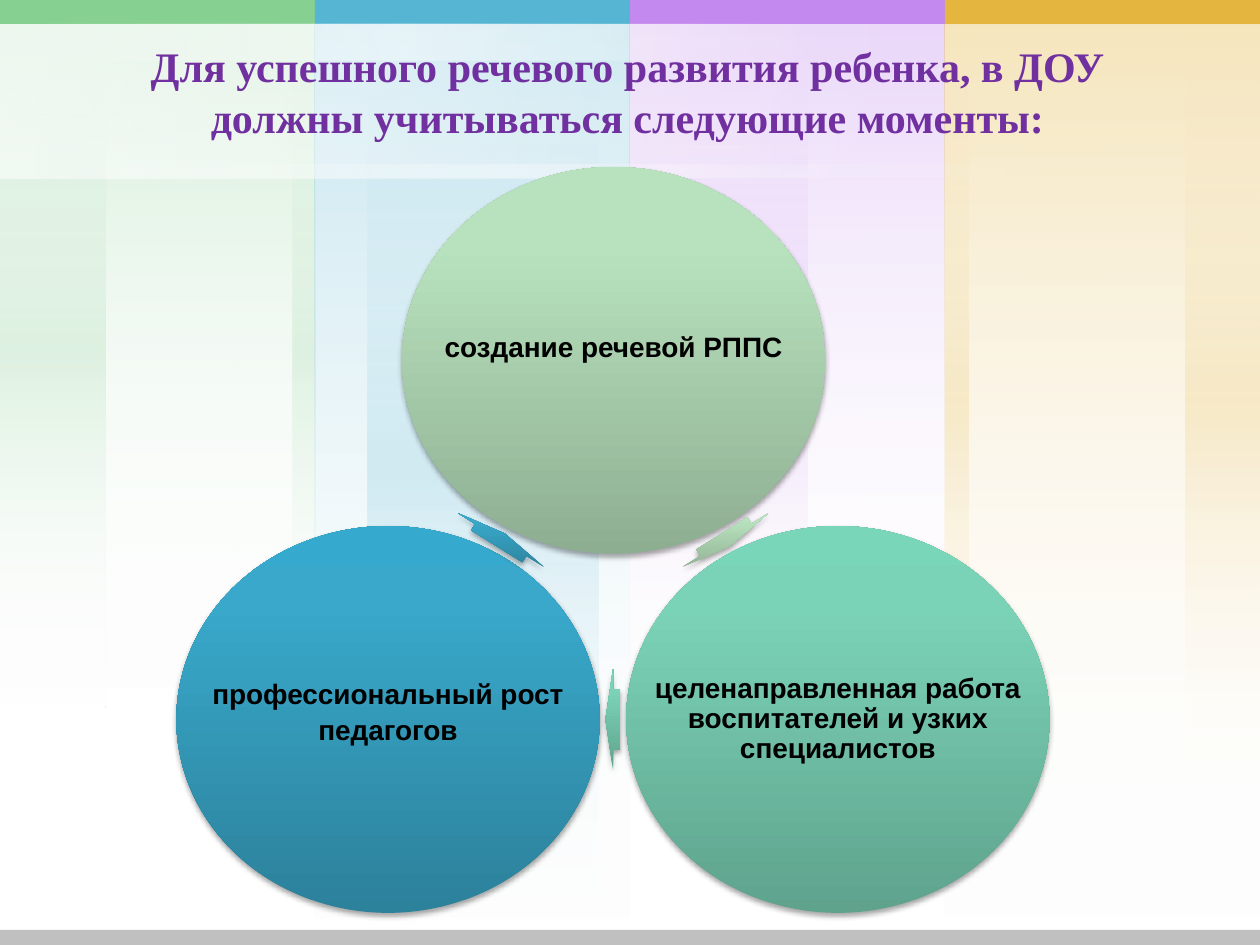
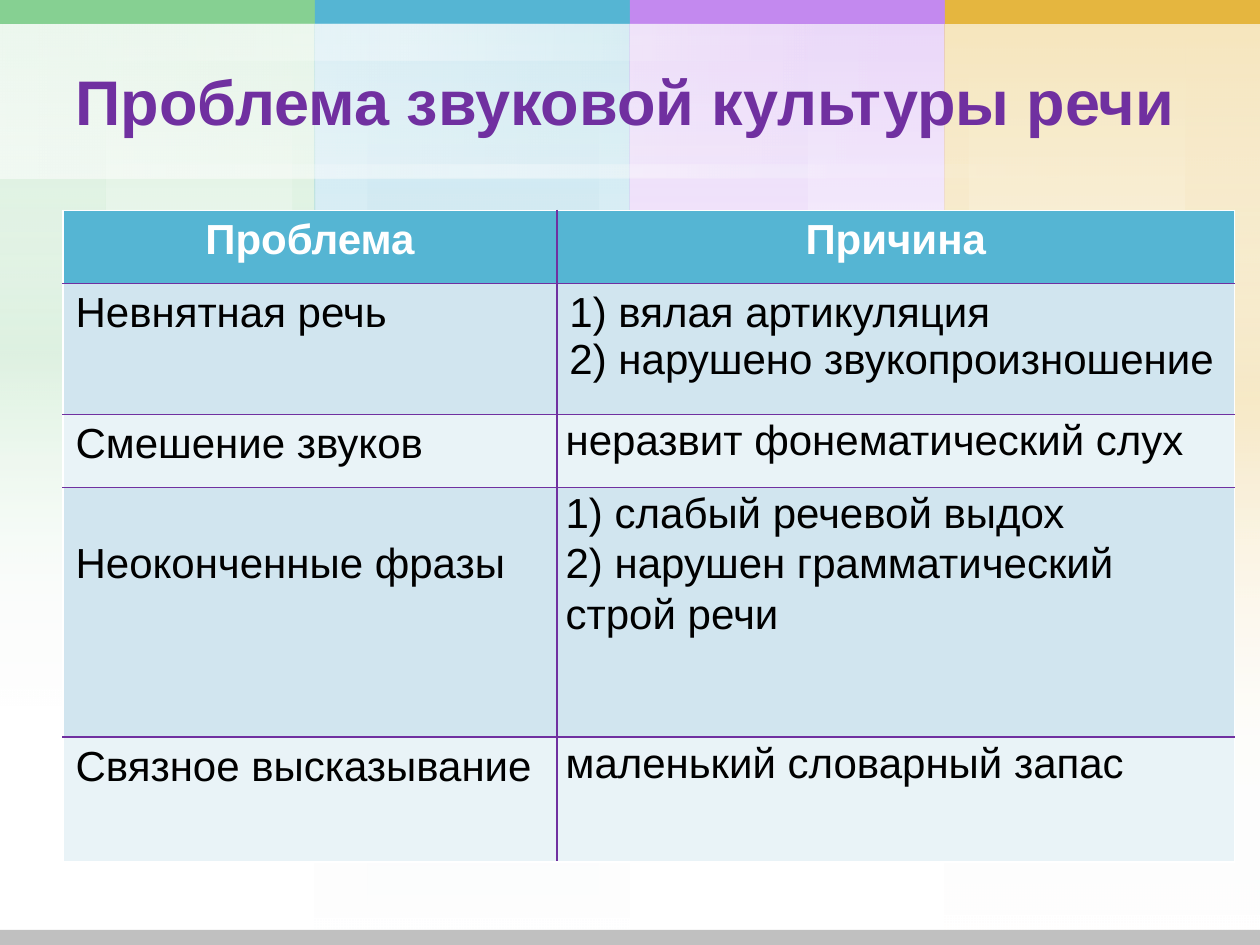
"""Build two slides on children's speech development: a cycle and a table."""
from math import atan2, degrees

from pptx import Presentation
from pptx.dml.color import RGBColor
from pptx.enum.shapes import MSO_SHAPE
from pptx.enum.text import MSO_ANCHOR, MSO_AUTO_SIZE, PP_ALIGN
from pptx.oxml import parse_xml
from pptx.oxml.ns import nsdecls, qn
from pptx.util import Inches, Pt

RECT, OVAL, ARROW = MSO_SHAPE.RECTANGLE, MSO_SHAPE.OVAL, MSO_SHAPE.RIGHT_ARROW
LEFT, CENTER = PP_ALIGN.LEFT, PP_ALIGN.CENTER
TOP, MIDDLE = MSO_ANCHOR.TOP, MSO_ANCHOR.MIDDLE
NO_AUTOFIT = MSO_AUTO_SIZE.NONE

WHITE = RGBColor(0xFF, 0xFF, 0xFF)
BLACK = RGBColor(0x00, 0x00, 0x00)
GREEN = RGBColor(0x86, 0xD0, 0x92)
BLUE = RGBColor(0x55, 0xB5, 0xD3)
LILAC = RGBColor(0xC3, 0x89, 0xEF)
GOLD = RGBColor(0xE5, 0xB6, 0x3F)
GREY = RGBColor(0xC0, 0xC0, 0xC0)
PURPLE = RGBColor(0x70, 0x30, 0xA0)
ROW_DARK = RGBColor(0xD1, 0xE5, 0xEF)
ROW_LIGHT = RGBColor(0xE9, 0xF3, 0xF7)
LEAF = (RGBColor(0x8E, 0xAE, 0x92), RGBColor(0xB8, 0xE2, 0xBD), RGBColor(0xB8, 0xE4, 0xBD))
MINT = (RGBColor(0x5F, 0xA3, 0x8D), RGBColor(0x7B, 0xD3, 0xB7), RGBColor(0x7A, 0xD6, 0xB8))
AZURE = (RGBColor(0x2C, 0x81, 0x9B), RGBColor(0x39, 0xA8, 0xCA), RGBColor(0x36, 0xAA, 0xCE))

BAND_WIDTH = 2.5
BANDS = [
    {"colour": GREEN, "height": 5.62, "fade_height": 5.62, "fades": [(2.32, 0.18), (0, 0.84)]},
    {"colour": BLUE, "height": 7.5, "fade_height": 7.5, "fades": [(2.92, 1.83)]},
    {"colour": LILAC, "height": 5.62, "fade_height": 5.62, "fades": [(5, 1.41)]},
    {"colour": GOLD, "height": 7.47, "fade_height": 6.37, "fades": [(7.5, 0.19), (9.41, 0.59)]},
]
FADE_OUT = [(0, 1), (100, 0)]
FADE_BOTH = [(0, 0), (50, 1), (100, 0)]
TITLE_SHEENS = [
    ((4.16, -2.85, 0.1, 8.42), FADE_BOTH),
    ((3.15, -2.95, 1.22, 7.51), FADE_OUT),
    ((3.06, -2.87, 0.29, 6.41), FADE_BOTH),
    ((3.15, -2.95, 1.22, 7.51), FADE_OUT),
]

CYCLE_TITLE = "Для успешного речевого развития ребенка, в ДОУ должны учитываться следующие моменты:"
CYCLE = [
    {"text": "создание речевой РППС", "center": (4.87, 2.86), "colours": LEAF,
     "spacing": 1.0, "lift": 0.23},
    {"text": "целенаправленная работа воспитателей и узких специалистов",
     "center": (6.65, 5.71), "colours": MINT, "spacing": 0.9, "lift": 0},
    {"text": "профессиональный рост педагогов", "center": (3.08, 5.71), "colours": AZURE,
     "spacing": 1.07, "lift": 0.15},
]
CIRCLE_SIZE = (3.36, 3.07)
ARROW_SIZE = (0.12, 0.8)

PROBLEM_TITLE = "Проблема звуковой культуры речи"
PROBLEMS = [
    ("Проблема", ["Причина"]),
    ("Невнятная речь", ["1) вялая артикуляция", "2) нарушено звукопроизношение"]),
    ("Смешение звуков", ["неразвит фонематический слух"]),
    ("Неоконченные фразы", ["1) слабый речевой выдох", "2) нарушен грамматический строй речи"]),
    ("Связное высказывание", ["маленький словарный запас"]),
]
COLUMN_WIDTHS = [3.92, 5.38]
ROW_HEIGHTS = [0.58, 1.04, 0.58, 1.98, 0.99]
LOWERED_ROW = 3
TIGHT_FROM_ROW = 2

TITLE_FRAME = {"vertical_anchor": MIDDLE, "auto_size": NO_AUTOFIT, "word_wrap": True}
CYCLE_TITLE_FONT = {"name": "Times New Roman", "size": Pt(24), "bold": True}
PROBLEM_TITLE_FONT = {"name": "Arial", "size": Pt(36), "bold": True}
CIRCLE_FONT = {"name": "Arial", "size": Pt(16), "bold": True}
HEADER_FONT = {"name": "Arial", "size": Pt(24), "bold": True}
BODY_FONT = {**HEADER_FONT, "bold": False}
TIGHT_CELL = {"margin_left": Inches(0.07), "margin_right": Inches(0.07),
              "margin_top": 0, "margin_bottom": 0}


def apply(target, values):
    for name, value in values.items():
        setattr(target, name, value)


def write(frame, lines, font, colour, align, spacing=1.0):
    for number, line in enumerate(lines):
        paragraph = frame.add_paragraph() if number else frame.paragraphs[0]
        apply(paragraph, {"alignment": align, "line_spacing": spacing})
        run = paragraph.add_run()
        run.text = line
        apply(run.font, font)
        run.font.color.rgb = colour


def add_plain(slide, kind, box, rotation=0):
    shape = slide.shapes.add_shape(kind, *map(Inches, box))
    shape.rotation = rotation
    shape.shadow.inherit = False
    shape.line.fill.background()
    return shape


def fill_solid(shape, colour):
    shape.fill.solid()
    shape.fill.fore_color.rgb = colour


def fill_gradient(shape, stops, angle, turns=1):
    shape.fill.gradient()
    properties = shape.element.spPr
    marks = "".join(
        f'<a:gs pos="{position * 1000}"><a:srgbClr val="{colour}">'
        f'<a:alpha val="{opacity * 1000}"/></a:srgbClr></a:gs>'
        for position, colour, opacity in stops)
    gradient = parse_xml(
        f'<a:gradFill {nsdecls("a")} rotWithShape="{turns}"><a:gsLst>{marks}</a:gsLst>'
        f'<a:lin ang="{angle * 60000}" scaled="0"/></a:gradFill>')
    properties.replace(properties.find(qn("a:gradFill")), gradient)


def fill_fade(shape, colour, opacity, profile):
    stops = [(position, colour if level else WHITE, level * opacity)
             for position, level in profile]
    fill_gradient(shape, stops, 90)


def add_shadow(shape):
    shape.element.spPr.find(qn("a:effectLst")).append(parse_xml(
        f'<a:outerShdw {nsdecls("a")} blurRad="{Pt(3.1)}" dist="{Pt(1.8)}" dir="5400000" '
        'rotWithShape="0"><a:srgbClr val="000000"><a:alpha val="35000"/></a:srgbClr>'
        '</a:outerShdw>'))


def draw_backdrop(slide):
    parts = []
    for index, band in enumerate(BANDS):
        strip = (index * BAND_WIDTH, 0, BAND_WIDTH, band["height"])
        fades = [((left, 0, width, band["fade_height"]), FADE_BOTH)
                 for left, width in band["fades"]]
        for box, profile in [(strip, FADE_OUT), *fades, (strip, FADE_OUT)]:
            parts.append(add_plain(slide, RECT, box))
            fill_fade(parts[-1], band["colour"], 20, profile)
    for index, band in enumerate(BANDS):
        parts.append(add_plain(slide, RECT, (index * BAND_WIDTH, 0, BAND_WIDTH, 0.19)))
        fill_solid(parts[-1], band["colour"])
    for box, profile in TITLE_SHEENS:
        parts.append(add_plain(slide, RECT, box, 270))
        fill_fade(parts[-1], WHITE, 35, profile)
    parts.append(add_plain(slide, RECT, (0, 7.38, 10, 0.12)))
    fill_solid(parts[-1], GREY)
    return parts


def move_to_layout(parts, layout):
    for index, part in enumerate(parts):
        part.element.nvSpPr.cNvPr.id = 100 + index
        layout.shapes.element.insert(2 + index, part.element)


def set_title(slide, text, box, font, align):
    title = slide.shapes.title
    apply(title, dict(zip(("left", "top", "width", "height"), map(Inches, box))))
    apply(title.text_frame, TITLE_FRAME)
    write(title.text_frame, [text], font, PURPLE, align)


def centred(center, size):
    return (center[0] - size[0] / 2, center[1] - size[1] / 2, *size)


def add_glossy(slide, kind, box, colours, rotation=0):
    shape = add_plain(slide, kind, box, rotation)
    stops = [(position, colour, 100) for position, colour in zip((0, 80, 100), colours)]
    fill_gradient(shape, stops, 270, turns=0)
    add_shadow(shape)
    return shape


def draw_cycle(slide):
    for step, following in zip(CYCLE, CYCLE[1:] + CYCLE[:1]):
        box = centred(step["center"], CIRCLE_SIZE)
        add_glossy(slide, OVAL, box, step["colours"])
        label = slide.shapes.add_textbox(*map(Inches, box)).text_frame
        apply(label, {"word_wrap": True, "vertical_anchor": MIDDLE,
                      "margin_left": Inches(0.02), "margin_right": Inches(0.02),
                      "margin_top": Inches(0.02),
                      "margin_bottom": Inches(0.02 + step["lift"])})
        write(label, [step["text"]], CIRCLE_FONT, BLACK, CENTER, step["spacing"])

        (x1, y1), (x2, y2) = step["center"], following["center"]
        middle = ((x1 + x2) / 2, (y1 + y2) / 2)
        heading = round(degrees(atan2(y2 - y1, x2 - x1))) % 360
        arrow = add_glossy(slide, ARROW, centred(middle, ARROW_SIZE), step["colours"], heading)
        arrow.adjustments[0], arrow.adjustments[1] = 0.6, 0.5


def set_borders(cell, colours):
    properties = cell._tc.get_or_add_tcPr()
    for index, (side, colour) in enumerate(zip("LRTB", colours)):
        properties.insert(index, parse_xml(
            f'<a:ln{side} {nsdecls("a")} w="{Pt(1)}"><a:solidFill>'
            f'<a:srgbClr val="{colour}"/></a:solidFill></a:ln{side}>'))


def draw_problems(slide):
    rows, columns = len(PROBLEMS), len(COLUMN_WIDTHS)
    table = slide.shapes.add_table(
        rows, columns, Inches(0.5), Inches(1.67),
        Inches(sum(COLUMN_WIDTHS)), Inches(sum(ROW_HEIGHTS))).table
    table.horz_banding = False
    for column, width in zip(table.columns, COLUMN_WIDTHS):
        column.width = Inches(width)
    for r, (problem, causes) in enumerate(PROBLEMS):
        table.rows[r].height = Inches(ROW_HEIGHTS[r])
        for c, lines in enumerate(([problem], causes)):
            cell = table.cell(r, c)
            cell.vertical_anchor = TOP
            fill_solid(cell, (ROW_DARK if r % 2 else ROW_LIGHT) if r else BLUE)
            outer = (c == 0, c == columns - 1, r == 0, r == rows - 1)
            set_borders(cell, [WHITE if edge else PURPLE for edge in outer])
            tight = c == 1 and r >= TIGHT_FROM_ROW
            if tight:
                apply(cell, TIGHT_CELL)
            elif r == LOWERED_ROW:
                cell.margin_top = Inches(0.42)
            style = (BODY_FONT, BLACK, LEFT) if r else (HEADER_FONT, WHITE, CENTER)
            write(cell.text_frame, lines, *style, 1.07 if tight else 1.0)


def main():
    deck = Presentation()
    deck.slide_width, deck.slide_height = Inches(10), Inches(7.5)
    layout = deck.slide_layouts[5]

    cycle = deck.slides.add_slide(layout)
    move_to_layout(draw_backdrop(cycle), layout)
    set_title(cycle, CYCLE_TITLE, (0.98, 0.21, 8, 1.03), CYCLE_TITLE_FONT, CENTER)
    draw_cycle(cycle)

    problems = deck.slides.add_slide(layout)
    set_title(problems, PROBLEM_TITLE, (0.5, 0.28, 9.22, 1.03), PROBLEM_TITLE_FONT, LEFT)
    draw_problems(problems)

    deck.save("out.pptx")


if __name__ == "__main__":
    main()
